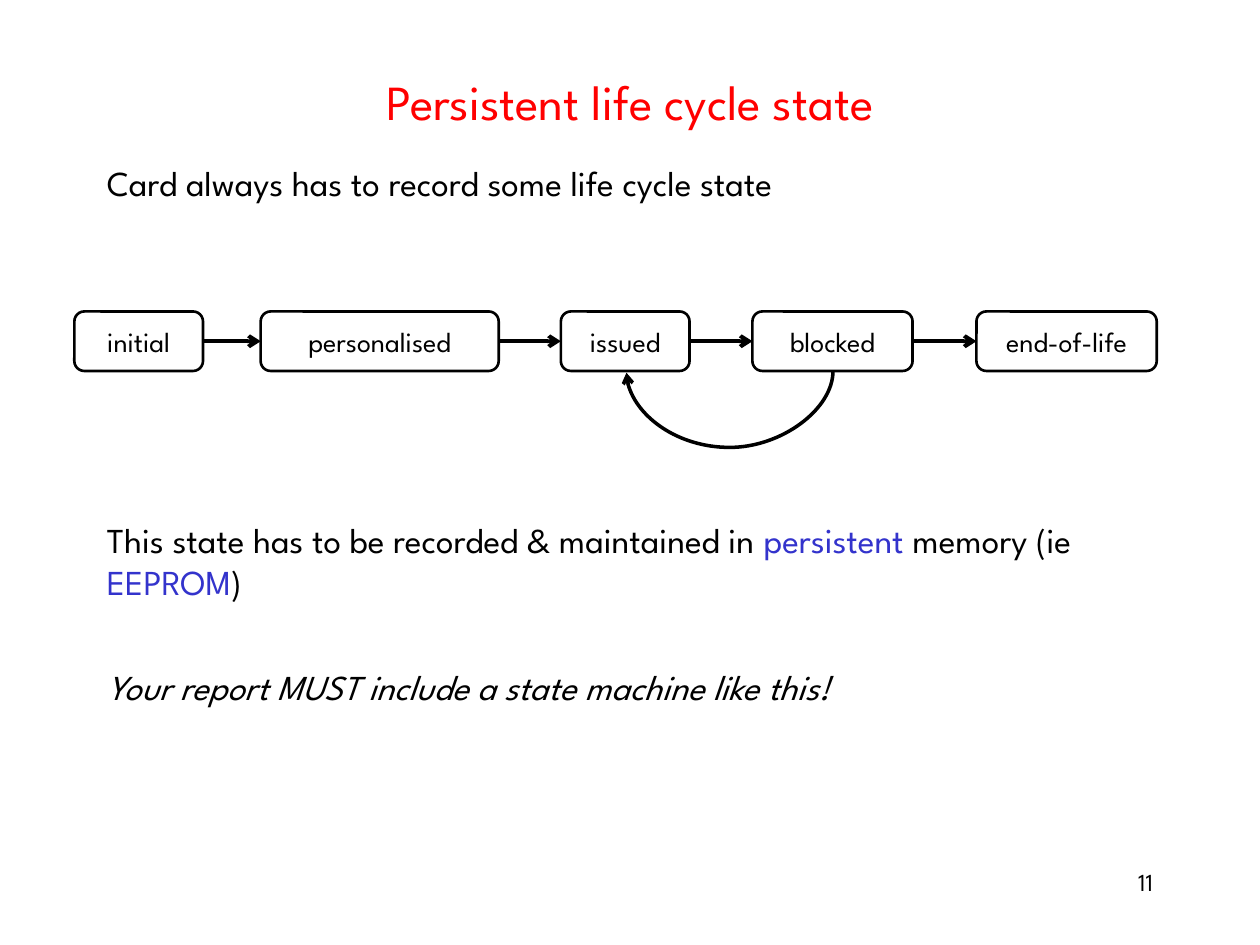
from itertools import pairwise

from lxml.etree import SubElement
from pptx import Presentation
from pptx.dml.color import RGBColor
from pptx.enum.shapes import MSO_CONNECTOR, MSO_SHAPE
from pptx.enum.text import MSO_ANCHOR, PP_ALIGN
from pptx.oxml.ns import qn
from pptx.util import Pt

BLACK, RED, BLUE = "000000", "FF0000", "3333CC"
STATES = [
    ("initial", 42.5, 73.5),
    ("personalised", 149, 136),
    ("issued", 320.5, 73.5),
    ("blocked", 430, 91.5),
    ("end-of-life", 558, 103),
]
BODY = [
    (6, False, [("Card always has to record some life cycle state", BLACK)]),
    (180, False, [
        ("This state has to be recorded & maintained in ", BLACK),
        ("persistent", BLUE),
        (" memory (ie ", BLACK),
        ("EEPROM", BLUE),
        (")", BLACK),
    ]),
    (36, True, [("Your report MUST include a state machine like this!", BLACK)]),
]
ROW_TOP, ROW_HEIGHT = 178, 34


def rgb(color):
    return RGBColor.from_string(color)


class Deck:
    """Draws styled elements on the current slide."""

    font = "League Spartan"

    def __init__(self, slide):
        self.slide = slide

    def format(self, p, size, color=BLACK, align=PP_ALIGN.LEFT):
        p.alignment = align
        p.font.name, p.font.size = self.font, Pt(size)
        p.font.color.rgb = rgb(color)

    def title(self, text, left, top, width, height):
        sp = self.slide.shapes.title
        sp.left, sp.top, sp.width, sp.height = map(Pt, (left, top, width, height))
        tf = sp.text_frame
        tf.text = text
        tf.vertical_anchor = MSO_ANCHOR.MIDDLE
        self.format(tf.paragraphs[0], 28, RED, PP_ALIGN.CENTER)

    def text(self, paragraphs, left, top, width, height, size, align=PP_ALIGN.LEFT):
        sp = self.slide.shapes.add_textbox(*map(Pt, (left, top, width, height)))
        tf = sp.text_frame
        tf.word_wrap = True
        for i, (before, italic, runs) in enumerate(paragraphs):
            p = tf.add_paragraph() if i else tf.paragraphs[0]
            self.format(p, size, align=align)
            p.space_before = Pt(before)
            p.font.italic = italic
            for text, color in runs:
                r = p.add_run()
                r.text = text
                r.font.color.rgb = rgb(color)

    def state(self, name, left, top, width, height):
        sp = self.slide.shapes.add_shape(
            MSO_SHAPE.ROUNDED_RECTANGLE, *map(Pt, (left, top, width, height)))
        sp.shadow.inherit = False
        sp.fill.background()
        sp.line.color.rgb, sp.line.width = rgb(BLACK), Pt(1.5)
        tf = sp.text_frame
        tf.text = name
        tf.word_wrap = False
        tf.vertical_anchor = MSO_ANCHOR.MIDDLE
        self.format(tf.paragraphs[0], 16, align=PP_ALIGN.CENTER)

    def arrow(self, x1, y1, x2, y2, width=2.25, kind=MSO_CONNECTOR.STRAIGHT):
        sp = self.slide.shapes.add_connector(kind, *map(Pt, (x1, y1, x2, y2)))
        sp.line.color.rgb, sp.line.width = rgb(BLACK), Pt(width)
        SubElement(sp.line._get_or_add_ln(), qn("a:tailEnd"), type="arrow")
        SubElement(sp._element.spPr, qn("a:effectLst"))
        return sp

    def loop(self, x1, x2, y, depth):
        mid, half = (x1 + x2) / 2, (x1 - x2) / 2
        sp = self.arrow(mid - 0.5, y - half, mid + 0.5, y + half, 2, MSO_CONNECTOR.CURVE)
        spPr = sp._element.spPr
        spPr.find(qn("a:xfrm")).set("rot", str(90 * 60000))
        guides = spPr.find(qn("a:prstGeom")).get_or_add_avLst()
        SubElement(guides, qn("a:gd"), name="adj1", fmla=f"val {depth * 100000}")


def main():
    prs = Presentation()
    prs.slide_width, prs.slide_height = Pt(720), Pt(540)
    deck = Deck(prs.slides.add_slide(prs.slide_layouts[5]))
    deck.title("Persistent life cycle state", 54, 26, 612, 63)
    deck.text(BODY, 54, 88.5, 612, 369, 20)
    deck.text([(0, False, [("11", BLACK)])], 516, 492, 150, 36, 14, PP_ALIGN.RIGHT)
    for name, left, width in STATES:
        deck.state(name, left, ROW_TOP, width, ROW_HEIGHT)
    middle = ROW_TOP + ROW_HEIGHT / 2
    for (_, left, width), (_, target, _) in pairwise(STATES):
        deck.arrow(left + width, middle, target, middle)
    deck.loop(476, 358, ROW_TOP + ROW_HEIGHT + 0.5, 44)
    prs.save("out.pptx")


if __name__ == "__main__":
    main()
